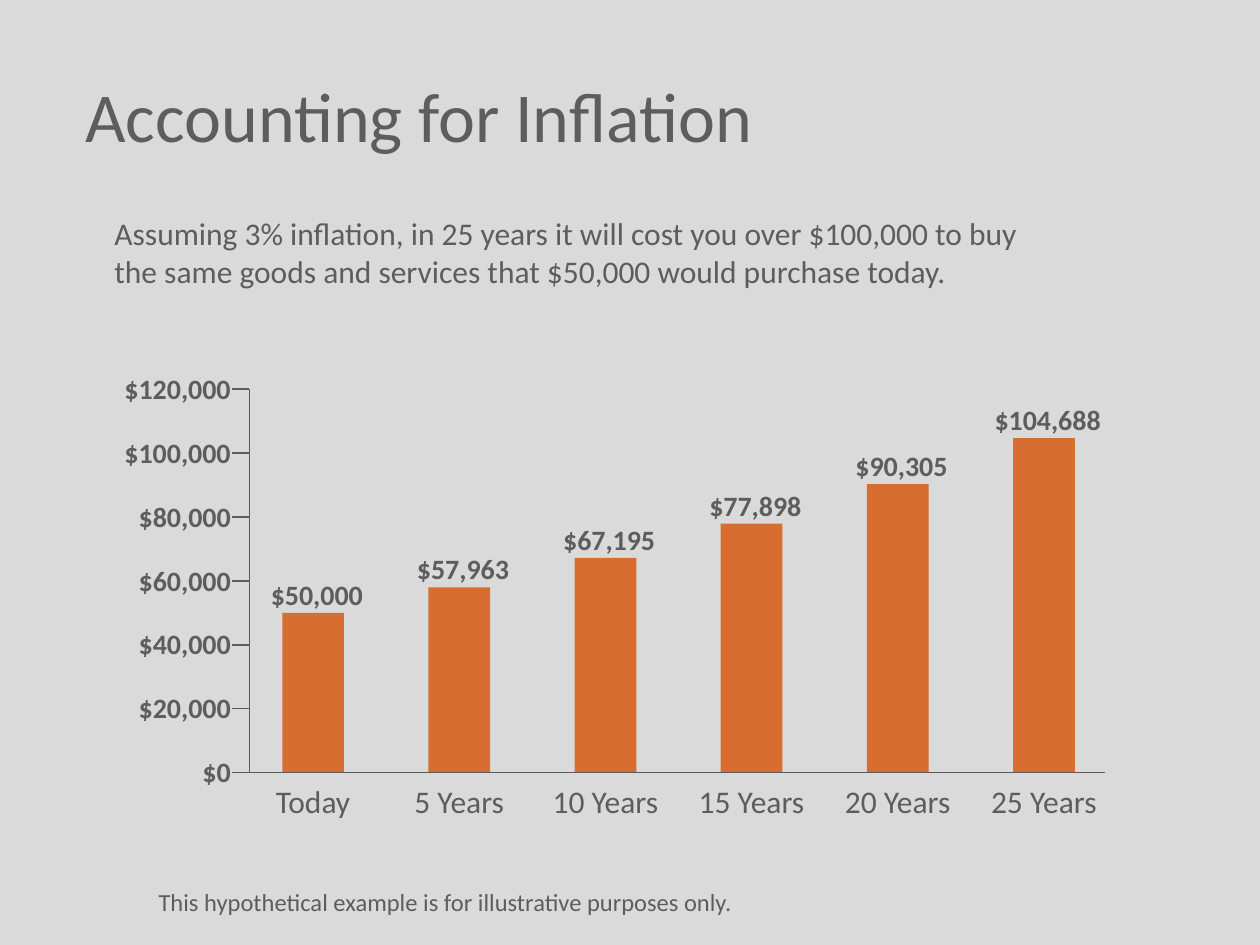
from dataclasses import dataclass

from lxml.etree import SubElement
from pptx import Presentation
from pptx.dml.color import RGBColor
from pptx.enum.shapes import MSO_CONNECTOR as Connector
from pptx.enum.shapes import MSO_SHAPE as Shape
from pptx.enum.text import MSO_ANCHOR as Anchor
from pptx.enum.text import PP_ALIGN as Align
from pptx.oxml.ns import qn
from pptx.util import Inches, Pt


@dataclass(frozen=True)
class Theme:
    font: str = "Calibri"
    ink: RGBColor = RGBColor(0x5D, 0x5D, 0x5D)
    bars: RGBColor = RGBColor(0xD7, 0x6D, 0x31)
    background: RGBColor = RGBColor(0xDA, 0xDA, 0xDA)
    title: int = 40
    body: int = 18
    values: int = 16
    note: int = 14
    line: int = 1


@dataclass(frozen=True)
class Box:
    left: float
    top: float
    width: float
    height: float

    @property
    def right(self):
        return self.left + self.width

    @property
    def bottom(self):
        return self.top + self.height

    def emu(self):
        return [Inches(side) for side in (self.left, self.top, self.width, self.height)]


THEME = Theme()
SLIDE = Box(0, 0, 10, 7.5)
TITLE = Box(0.58, 0.58, 10, 0.66)
MESSAGE = Box(0.81, 1.65, 7.65, 1.03)
PLOT = Box(1.98, 3.09, 6.79, 3.04)
NOTE = Box(1.16, 6.99, 7.29, 0.34)

TOP_COST = 120000
COST_STEP = 20000
COSTS = {
    "Today": 50000,
    "5 Years": 57963,
    "10 Years": 67195,
    "15 Years": 77898,
    "20 Years": 90305,
    "25 Years": 104688,
}

TICK = 0.14
COLUMN = 1.16
FIRST_BAR = 0.26
BAR_WIDTH = 0.49
COST_WIDTH, COST_HEIGHT = 1.26, 0.37
PERIOD_WIDTH, PERIOD_HEIGHT = 1.4, 0.4


def add_text(slide, box, text, size, bold=False, align=Align.LEFT, anchor=Anchor.TOP):
    frame = slide.shapes.add_textbox(*box.emu()).text_frame
    frame.word_wrap = True
    frame.vertical_anchor = anchor
    paragraph = frame.paragraphs[0]
    paragraph.text = text
    paragraph.alignment = align
    font = paragraph.font
    font.name = THEME.font
    font.size = Pt(size)
    font.bold = bold
    font.color.rgb = THEME.ink


def add_cost(slide, left, top, cost, align):
    box = Box(left, top, COST_WIDTH, COST_HEIGHT)
    add_text(slide, box, f"${cost:,}", THEME.values, bold=True, align=align)


def add_line(slide, *ends):
    line = slide.shapes.add_connector(Connector.STRAIGHT, *map(Inches, ends))
    line.line.color.rgb = THEME.ink
    line.line.width = Pt(THEME.line)
    SubElement(line.element.spPr, qn("a:effectLst"))


def add_bar(slide, box):
    bar = slide.shapes.add_shape(Shape.RECTANGLE, *box.emu())
    bar.shadow.inherit = False
    bar.fill.solid()
    bar.fill.fore_color.rgb = THEME.bars
    bar.line.fill.background()


def height_of(cost, plot):
    return plot.height * cost / TOP_COST


def add_axes(slide, plot):
    add_line(slide, plot.left, plot.bottom, plot.right, plot.bottom)
    add_line(slide, plot.left, plot.bottom, plot.left, plot.top)
    for cost in range(0, TOP_COST + 1, COST_STEP):
        level = plot.bottom - height_of(cost, plot)
        add_line(slide, plot.left - TICK, level, plot.left, level)
        add_cost(slide, plot.left - 0.05 - COST_WIDTH, level - 0.19, cost, Align.RIGHT)


def add_columns(slide, plot):
    """Place each bar with its cost above it and its period below the axis."""
    for column, (period, cost) in enumerate(COSTS.items()):
        left = plot.left + FIRST_BAR + column * COLUMN
        height = height_of(cost, plot)
        bar = Box(left, plot.bottom - height, BAR_WIDTH, height)
        add_bar(slide, bar)

        center = left + BAR_WIDTH / 2
        add_cost(slide, center + 0.03 - COST_WIDTH / 2, bar.top - 0.33, cost, Align.CENTER)
        period_box = Box(
            center - PERIOD_WIDTH / 2, plot.bottom + 0.03, PERIOD_WIDTH, PERIOD_HEIGHT
        )
        add_text(slide, period_box, period, THEME.body, align=Align.CENTER)


def main():
    deck = Presentation()
    deck.slide_width = Inches(SLIDE.width)
    deck.slide_height = Inches(SLIDE.height)
    slide = deck.slides.add_slide(deck.slide_layouts[6])
    slide.background.fill.solid()
    slide.background.fill.fore_color.rgb = THEME.background

    add_text(slide, TITLE, "Accounting for Inflation", THEME.title, anchor=Anchor.MIDDLE)
    add_text(
        slide,
        MESSAGE,
        "Assuming 3% inflation, in 25 years it will cost you over $100,000 to buy "
        "the same goods and services that $50,000 would purchase today.",
        THEME.body,
    )
    add_columns(slide, PLOT)
    add_axes(slide, PLOT)
    add_text(
        slide,
        NOTE,
        "This hypothetical example is for illustrative purposes only.",
        THEME.note,
    )
    deck.save("out.pptx")


if __name__ == "__main__":
    main()
